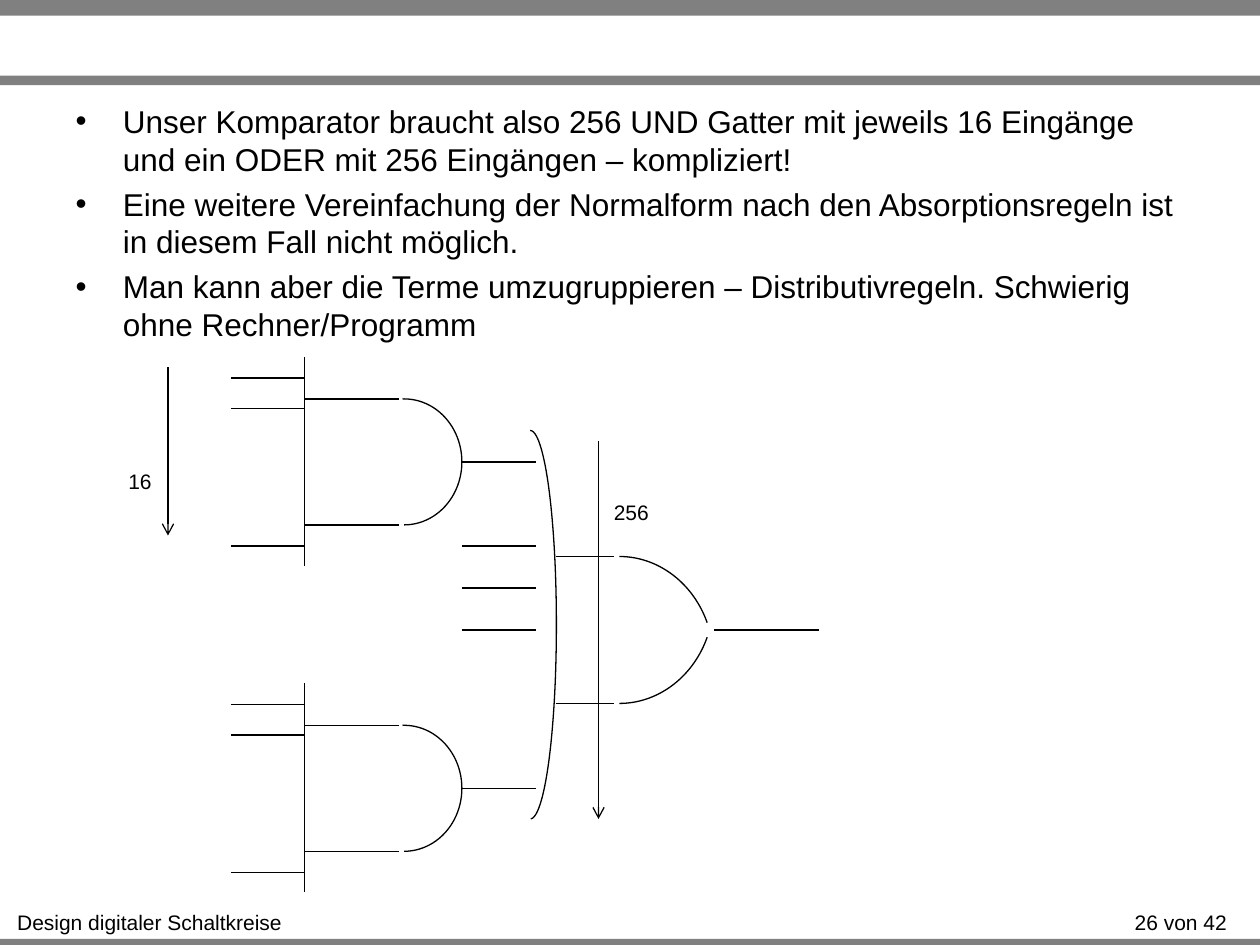
"""Build a slide on the gate count of a comparator, with its circuit sketch."""
import pptx
import pptx.dml.color
import pptx.enum.shapes
import pptx.enum.text
import pptx.oxml.ns
import pptx.oxml.xmlchemy
import pptx.util
from lxml import etree

Pt = pptx.util.Pt
qn = pptx.oxml.ns.qn
SHAPE = pptx.enum.shapes.MSO_SHAPE
COLORS = {"ink": "000000", "bar": "808080"}
POINTS = [
    "Unser Komparator braucht also 256 UND Gatter mit jeweils 16 Eingänge "
    "und ein ODER mit 256 Eingängen – kompliziert!",
    "Eine weitere Vereinfachung der Normalform nach den Absorptionsregeln ist "
    "in diesem Fall nicht möglich.",
    "Man kann aber die Terme umzugruppieren – Distributivregeln. Schwierig "
    "ohne Rechner/Programm",
]


class Sketch:
    """Hold the style and the current slide."""

    def __init__(self, slide):
        self.slide = slide
        self.font = "Arial"
        self.width = Pt(0.75)

    def color(self, name):
        return pptx.dml.color.RGBColor.from_string(COLORS[name])

    def style(self, par, size):
        for run in par.runs:
            run.font.name = self.font
            run.font.size = Pt(size)
            run.font.color.rgb = self.color("ink")

    def band(self, top, height):
        shape = self.slide.shapes.add_shape(
            SHAPE.RECTANGLE, 0, Pt(top), Pt(720), Pt(height))
        shape.shadow.inherit = False
        shape.fill.solid()
        shape.fill.fore_color.rgb = self.color("bar")
        shape.line.fill.background()

    def label(self, text, left, top, width):
        box = self.slide.shapes.add_textbox(Pt(left), Pt(top), Pt(width), Pt(21.6))
        frame = box.text_frame
        frame.word_wrap = False
        frame.auto_size = pptx.enum.text.MSO_AUTO_SIZE.SHAPE_TO_FIT_TEXT
        frame.text = text
        par = frame.paragraphs[0]
        par.alignment = pptx.enum.text.PP_ALIGN.CENTER
        self.style(par, 12)

    def bullets(self, texts, left, top, width, height):
        body = self.slide.placeholders[1]
        body.left, body.top, body.width, body.height = map(
            Pt, (left, top, width, height))
        frame = body.text_frame
        frame.text = "\n".join(texts)
        frame.auto_size = pptx.enum.text.MSO_AUTO_SIZE.NONE
        for num, par in enumerate(frame.paragraphs):
            props = par._p.get_or_add_pPr()
            props.set("marL", str(Pt(27)))
            props.set("indent", str(Pt(-27)))
            etree.SubElement(props, qn("a:buChar")).set("char", "•")
            par.space_before = Pt(4 if num else 0)
            self.style(par, 18)

    def line(self, x1, y1, x2, y2, arrow=False):
        wire = self.slide.shapes.add_connector(
            pptx.enum.shapes.MSO_CONNECTOR.STRAIGHT, Pt(x1), Pt(y1), Pt(x2), Pt(y2))
        wire.line.color.rgb = self.color("ink")
        wire.line.width = self.width
        if arrow:
            etree.SubElement(
                wire.line._get_or_add_ln(), qn("a:tailEnd")).set("type", "arrow")
        etree.SubElement(wire._element.spPr, qn("a:effectLst"))

    def arc(self, left, top, width, height, end, flip=False):
        curve = self.slide.shapes.add_shape(
            SHAPE.ARC, Pt(left), Pt(top), Pt(width), Pt(height))
        curve.shadow.inherit = False
        curve.adjustments[0] = 162
        curve.adjustments[1] = end
        curve.fill.background()
        curve.line.color.rgb = self.color("ink")
        curve.line.width = self.width
        if flip:
            curve._element.spPr.get_or_add_xfrm().set("flipV", "1")

    def gate(self, top):
        for step in (-12, 5.5, 84):
            self.line(132, top + step, 174, top + step)
        self.line(174, top - 24, 174, top + 95.5)
        for edge in (top, top + 72):
            self.line(174, edge, 228, edge)
        self.arc(198, top, 66, 72, 54.9, flip=True)
        self.line(264, top + 36, 306, top + 36)


def main():
    deck = pptx.Presentation()
    deck.slide_width, deck.slide_height = Pt(720), Pt(540)
    slide = deck.slides.add_slide(deck.slide_layouts[1])
    title = slide.shapes.title._element
    title.getparent().remove(title)
    sketch = Sketch(slide)

    for top, height in ((536.5, 5.5), (0, 9), (43.2, 5.5)):
        sketch.band(top, height)
    sketch.label("Design digitaler Schaltkreise", 2, 516.2, 167)
    sketch.label("26 von 42", 635.8, 516.2, 77.8)
    sketch.bullets(POINTS, 36, 54.7, 648, 155.5)

    for top in (228, 414.5):
        sketch.gate(top)

    sketch.arc(288, 246, 30, 222, 53.88)
    for top, edge, flip in ((282, 318, True), (318, 402, False)):
        sketch.arc(300, top, 108, 120, 201.69, flip)
        sketch.line(318, edge, 351, edge)
    for level in (312, 336, 360):
        sketch.line(264, level, 306, level)
    sketch.line(408, 360, 468, 360)

    sketch.line(96, 210, 96, 306, arrow=True)
    sketch.label("16", 66, 264, 28)
    sketch.line(342, 252, 342, 468, arrow=True)
    sketch.label("256", 343.5, 282, 34.5)
    deck.save("out.pptx")


if __name__ == "__main__":
    main()
